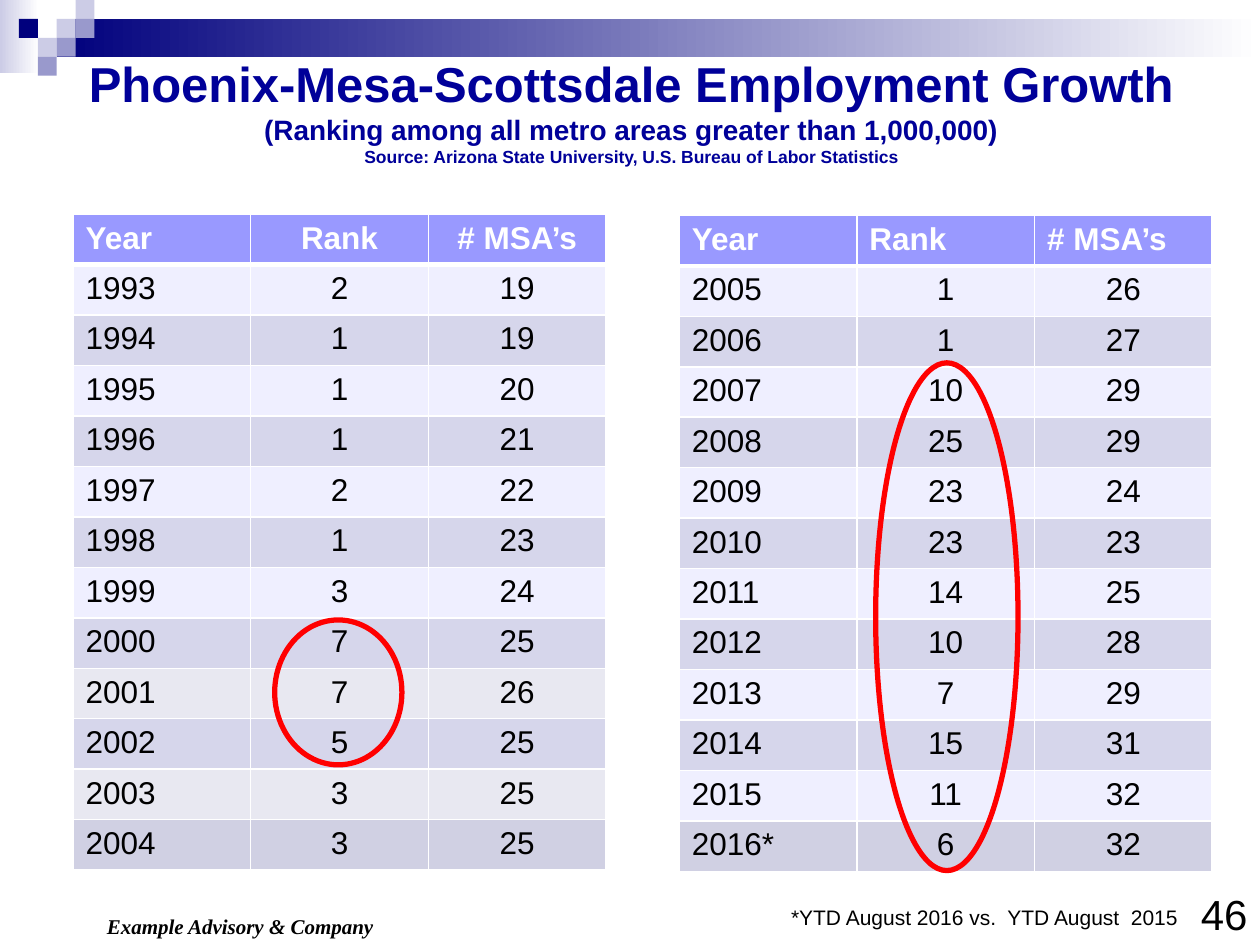
from copy import deepcopy

from pptx import Presentation
from pptx.dml.color import RGBColor
from pptx.enum.shapes import MSO_SHAPE as Shape
from pptx.enum.text import MSO_ANCHOR as Anchor, PP_ALIGN as Align
from pptx.oxml import parse_xml
from pptx.oxml.ns import nsdecls, qn
from pptx.util import Inches, Pt

WHITE = RGBColor(0xFF, 0xFF, 0xFF)
BLACK = RGBColor(0, 0, 0)
NAVY = RGBColor(0, 0, 0x7D)
TITLE_BLUE = RGBColor(0, 0, 0x99)
LAVENDER = RGBColor(0xCC, 0xCC, 0xE6)
VIOLET = RGBColor(0x99, 0x99, 0xCC)
HEADER = RGBColor(0x99, 0x99, 0xFF)
PALE_BAND = RGBColor(0xEF, 0xEF, 0xFF)
DARK_BAND = RGBColor(0xD6, 0xD6, 0xEB)
GREY_BAND = RGBColor(0xE8, 0xE8, 0xF1)
LAST_BAND = RGBColor(0xD0, 0xD0, 0xE3)
RED = RGBColor(0xFF, 0, 0)


class RankingSlide:
    font = "Arial"
    column_width = 1.41
    row_height = 0.4

    def __init__(self, slide):
        self.slide = slide

    def style(self, font, size, color=BLACK, bold=False, italic=False, name=None):
        font.name = name or self.font
        font.size = Pt(size)
        font.bold, font.italic = bold, italic
        font.color.rgb = color

    def shape(self, kind, box):
        shape = self.slide.shapes.add_shape(kind, *map(Inches, box))
        shape.shadow.inherit = False
        return shape

    def block(self, box, color, fade_to=None):
        block = self.shape(Shape.RECTANGLE, box)
        block.line.fill.background()
        if fade_to is None:
            block.fill.solid()
            block.fill.fore_color.rgb = color
            return
        block.fill.gradient()
        block.fill.gradient_angle = 0
        for stop, shade in zip(block.fill.gradient_stops, (color, fade_to)):
            stop.color.rgb = shade

    def ring(self, box):
        ring = self.shape(Shape.OVAL, box)
        ring.fill.background()
        ring.line.color.rgb = RED
        ring.line.width = Pt(3)

    def text_frame(self, box, wrap=True):
        frame = self.slide.shapes.add_textbox(*map(Inches, box)).text_frame
        frame.word_wrap = wrap
        return frame

    def text(self, box, words, size, align=Align.LEFT, wrap=True, **look):
        paragraph = self.text_frame(box, wrap).paragraphs[0]
        paragraph.text = words
        paragraph.alignment = align
        self.style(paragraph.font, size, **look)

    def title(self, box, lines):
        frame = self.text_frame(box)
        frame.vertical_anchor = Anchor.MIDDLE
        paragraph = frame.paragraphs[0]
        paragraph.alignment = Align.CENTER
        for index, (words, size) in enumerate(lines):
            if index:
                paragraph.add_line_break()
            run = paragraph.add_run()
            run.text = words
            self.style(run.font, size, TITLE_BLUE, bold=True)
        # Each break takes the size of the line it ends
        for line_break in paragraph._p.findall(qn("a:br")):
            line_break.append(deepcopy(line_break.getprevious().find(qn("a:rPr"))))

    def borders(self, cell, row):
        properties = cell._tc.get_or_add_tcPr()
        widths = {"L": 1, "R": 1, "T": 3 if row == 1 else 1, "B": 3 if row == 0 else 1}
        for side, width in widths.items():
            properties.append(parse_xml(
                f'<a:ln{side} {nsdecls("a")} w="{Pt(width)}"><a:solidFill>'
                f'<a:srgbClr val="{WHITE}"/></a:solidFill></a:ln{side}>'))

    def table(self, left, top, records, bands, header_align):
        rows = [("Year", "Rank", "# MSA’s"), *records]
        columns = len(rows[0])
        table = self.slide.shapes.add_table(
            len(rows), columns, Inches(left), Inches(top),
            Inches(self.column_width * columns),
            Inches(self.row_height * len(rows))).table
        for column in table.columns:
            column.width = Inches(self.column_width)
        for r, (values, band) in enumerate(zip(rows, [HEADER, *bands])):
            table.rows[r].height = Inches(self.row_height)
            for c, value in enumerate(values):
                cell = table.cell(r, c)
                self.borders(cell, r)
                cell.fill.solid()
                cell.fill.fore_color.rgb = band
                paragraph = cell.text_frame.paragraphs[0]
                paragraph.text = str(value)
                if c:
                    paragraph.alignment = Align.CENTER if r else header_align
                self.style(paragraph.font, 18, BLACK if r else WHITE, bold=r == 0)


def yearly(first_year, ranks, metros):
    return [(first_year + i, *pair) for i, pair in enumerate(zip(ranks, metros))]


def main():
    deck = Presentation()
    deck.slide_width, deck.slide_height = Inches(10), Inches(7.5)
    page = RankingSlide(deck.slides.add_slide(deck.slide_layouts[6]))

    # Banner with its checkered corner
    page.block((0, 0, 0.31, 0.58), LAVENDER, fade_to=WHITE)
    page.block((0.45, 0.15, 9.55, 0.3), NAVY, fade_to=WHITE)
    checks = [(3, 1, LAVENDER), (4, 0, LAVENDER), (4, 1, VIOLET), (2, 2, LAVENDER),
              (1, 1, NAVY), (3, 2, VIOLET), (2, 3, VIOLET)]
    side = 0.15
    for column, row, color in checks:
        page.block((column * side, row * side, side, side), color)

    # Company footer
    page.text((0.75, 7.2, 2.5, 0.3), "Example Advisory & Company", 12,
              bold=True, italic=True, name="Times New Roman")

    # Ranking tables
    recent = yearly(2005, [1, 1, 10, 25, 23, 23, 14, 10, 7, 15, 11],
                    [26, 27, 29, 29, 24, 23, 25, 28, 29, 31, 32])
    recent.append(("2016*", 6, 32))
    recent_bands = [PALE_BAND, DARK_BAND] * 5 + [PALE_BAND, LAST_BAND]
    page.table(5.39, 1.71, recent, recent_bands, Align.LEFT)

    early = yearly(1993, [2, 1, 1, 1, 2, 1, 3, 7, 7, 5, 3, 3],
                   [19, 19, 20, 21, 22, 23, 24, 25, 26, 25, 25, 25])
    early_bands = ([PALE_BAND, DARK_BAND] * 4
                   + [GREY_BAND, DARK_BAND, GREY_BAND, LAST_BAND])
    page.table(0.58, 1.7, early, early_bands, Align.CENTER)

    # Title
    page.title((0.51, 0.25, 9, 1.25), [
        ("Phoenix-Mesa-Scottsdale Employment Growth", 28),
        ("(Ranking among all metro areas greater than 1,000,000)", 16),
        ("Source: Arizona State University, U.S. Bureau of Labor Statistics", 10)])

    # Rings around the weak years
    page.ring((2.18, 4.92, 1.01, 1.15))
    page.ring((6.95, 2.88, 1.13, 4.03))

    # Footnote and page number
    page.text((6.15, 7.13, 3.3, 0.3), "*YTD August 2016 vs.  YTD August  2015", 12,
              Align.RIGHT, wrap=False)
    page.text((9.39, 7, 0.61, 0.5), "46", 24, Align.RIGHT)

    deck.save("out.pptx")


if __name__ == "__main__":
    main()
